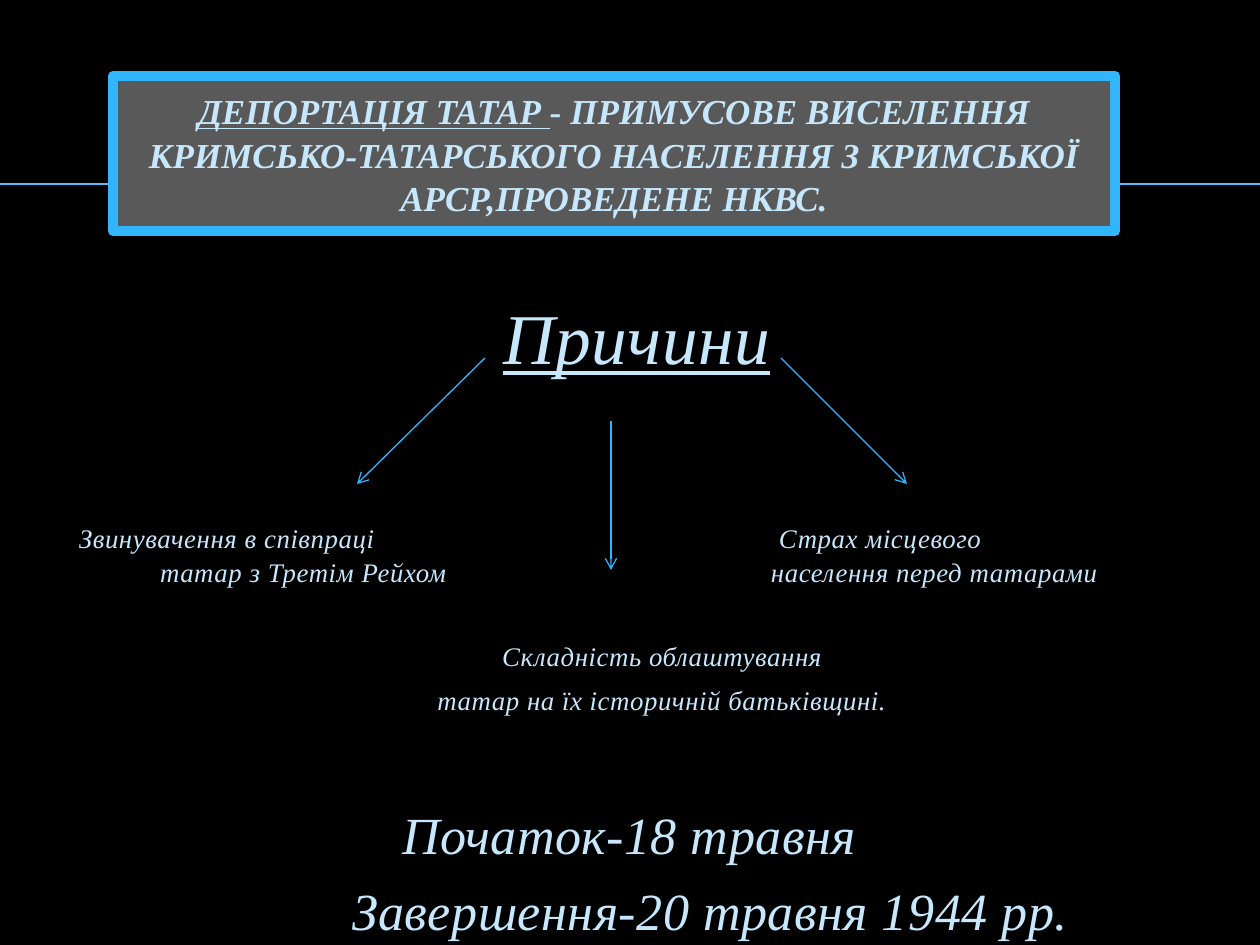
"""Build the slide on the deportation of the Crimean Tatars, its causes and dates."""
from pptx import Presentation
from pptx.dml.color import RGBColor as Rgb
from pptx.enum.shapes import MSO_CONNECTOR as Connector
from pptx.enum.text import MSO_ANCHOR as Anchor, MSO_AUTO_SIZE as AutoSize, PP_ALIGN as Align
from pptx.oxml.ns import qn
from pptx.util import Pt
from lxml.etree import SubElement

SCALE = 914400 / 126
THEME = {
    "back": Rgb.from_string("000000"),
    "panel": Rgb.from_string("595959"),
    "accent": Rgb.from_string("31B6FD"),
    "rule": Rgb.from_string("5BBAF6"),
    "text": Rgb.from_string("C6E7FC"),
    "font": "Times New Roman",
    "title": 20, "heading": 40.8, "cause": 15.3, "dates": 29.8,
    "leading": 1.04,
}


def px(value):
    return round(value * SCALE)


def add_line(start, end, color, weight, arrow=False):
    line = slide.shapes.add_connector(Connector.STRAIGHT, *map(px, start + end))
    line.line.color.rgb = color
    line.line.width = Pt(weight)
    properties = line._element.spPr
    if arrow:
        SubElement(properties.find(qn("a:ln")), qn("a:tailEnd"), type="arrow")
    SubElement(properties, qn("a:effectLst"))
    return line


deck = Presentation()
deck.slide_width, deck.slide_height = px(1260), px(945)
slide = deck.slides.add_slide(deck.slide_layouts[5])
slide.background.fill.solid()
slide.background.fill.fore_color.rgb = THEME["back"]

rule = add_line((0, 184), (1260, 184), THEME["rule"], 1)
slide.shapes._spTree.insert(2, rule._element)

title = slide.shapes.title
title_place = {"left": 113, "top": 76, "width": 1002, "height": 155}
for side, value in title_place.items():
    setattr(title, side, px(value))
title.fill.solid()
title.fill.fore_color.rgb = THEME["panel"]
title.line.color.rgb = THEME["accent"]
title.line.width = Pt(6)
title_format = {"word_wrap": True, "auto_size": AutoSize.NONE, "vertical_anchor": Anchor.MIDDLE}
for key, value in title_format.items():
    setattr(title.text_frame, key, value)
definition = title.text_frame.paragraphs[0]
definition.alignment = Align.CENTER
definition.line_spacing = THEME["leading"]
for words, underline in (
    ("ДЕПОРТАЦІЯ ТАТАР ", True),
    ("- ПРИМУСОВЕ ВИСЕЛЕННЯ КРИМСЬКО-ТАТАРСЬКОГО НАСЕЛЕННЯ З КРИМСЬКОЇ АРСР,ПРОВЕДЕНЕ НКВС.", False),
):
    run = definition.add_run()
    run.text = words
    title_font = {"name": THEME["font"], "size": Pt(THEME["title"]), "bold": True,
                  "italic": True, "underline": underline}
    for key, value in title_font.items():
        setattr(run.font, key, value)
    run.font.color.rgb = THEME["text"]

# place, type size, alignment, space between lines, underline, (line, indent)
blocks = [
    ((437, 290, 400, 90), "heading", Align.CENTER, 0, True, [("Причини", 0)]),
    ((79, 521, 400, 66), "cause", Align.LEFT, 0, False,
     [("Звинувачення в співпраці", 0), ("татар з Третім Рейхом", 81)]),
    ((771, 521, 400, 66), "cause", Align.LEFT, 0, False,
     [("Страх місцевого", 8), ("населення перед татарами", 0)]),
    ((412, 639, 500, 76), "cause", Align.CENTER, 6, False,
     [("Складність облаштування", 0), ("татар на їх історичній батьківщині.", 0)]),
    ((352, 800, 800, 138), "dates", Align.LEFT, 6, False,
     [("Початок-18 травня", 50), ("Завершення-20 травня 1944 рр.", 0)]),
]
for place, size, align, gap, underline, lines in blocks:
    frame = slide.shapes.add_textbox(*map(px, place)).text_frame
    frame_format = {"word_wrap": True, "margin_left": 0, "margin_right": 0,
                    "margin_top": 0, "margin_bottom": 0}
    for key, value in frame_format.items():
        setattr(frame, key, value)
    for number, (words, indent) in enumerate(lines):
        line = frame.add_paragraph() if number else frame.paragraphs[0]
        line.alignment = align
        line.line_spacing = THEME["leading"]
        line.space_before = Pt(gap if number else 0)
        line._p.get_or_add_pPr().set("marL", str(px(indent)))
        run = line.add_run()
        run.text = words
        text_font = {"name": THEME["font"], "size": Pt(THEME[size]), "italic": True,
                     "underline": underline}
        for key, value in text_font.items():
            setattr(run.font, key, value)
        run.font.color.rgb = THEME["text"]
        run._r.get_or_add_rPr().set("spc", "30")

for start, end in (((781, 358), (907, 484)), ((485, 358), (357, 484)), ((611, 421), (611, 570))):
    add_line(start, end, THEME["accent"], 0.75, arrow=True)

deck.save("out.pptx")
